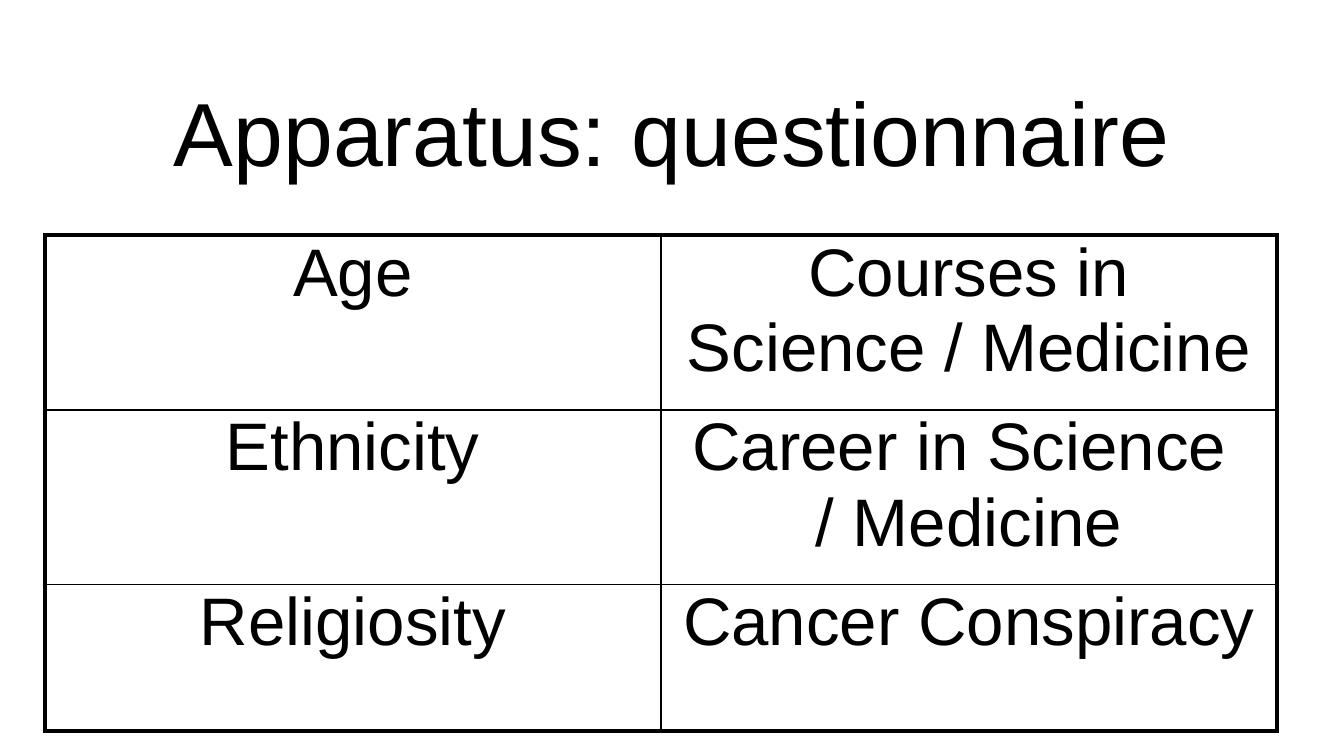
import pptx
import pptx.util
import pptx.dml.color
import pptx.enum.text
import pptx.oxml
import pptx.oxml.ns

Pt = pptx.util.Pt
FONT = "Arial"
INK = "000000"
PAPER = "FFFFFF"
OUTER_LINE = 2.25
INNER_LINE = 1
ROW_HEIGHTS = [93.6, 93.6, 78.5]
QUESTIONS = [
    [["Age"], ["Courses in Science / Medicine"]],
    [["Ethnicity"], ["Career in Science ", "/ Medicine"]],
    [["Religiosity"], ["Cancer Conspiracy"]],
]


def colour(hex_string):
    return pptx.dml.color.RGBColor.from_string(hex_string)


def write_centred(frame, lines, size):
    for index, line in enumerate(lines):
        paragraph = frame.paragraphs[0] if index == 0 else frame.add_paragraph()
        paragraph.alignment = pptx.enum.text.PP_ALIGN.CENTER
        run = paragraph.add_run()
        run.text = line
        run.font.size = Pt(size)
        run.font.name = FONT
        run.font.color.rgb = colour(INK)


def set_borders(cell, widths):
    """Draw the cell's edges; widths maps L, R, T and B to points."""
    properties = cell._tc.get_or_add_tcPr()
    for position, side in enumerate("LRTB"):
        border = pptx.oxml.parse_xml(
            f'<a:ln{side} {pptx.oxml.ns.nsdecls("a")} w="{int(Pt(widths[side]))}">'
            f'<a:solidFill><a:srgbClr val="{INK}"/></a:solidFill>'
            f'<a:prstDash val="solid"/></a:ln{side}>'
        )
        properties.insert(position, border)


def add_title(slide, left, top, width, height):
    title = slide.shapes.add_textbox(Pt(left), Pt(top), Pt(width), Pt(height))
    frame = title.text_frame
    frame.word_wrap = True
    frame.vertical_anchor = pptx.enum.text.MSO_ANCHOR.MIDDLE
    frame.margin_left = frame.margin_right = Pt(7.2)
    frame.margin_top = frame.margin_bottom = Pt(7.2)
    write_centred(frame, ["Apparatus: questionnaire"], 48)


def add_question_table(slide, left, top, width, height):
    row_count, column_count = len(QUESTIONS), len(QUESTIONS[0])
    table = slide.shapes.add_table(
        row_count, column_count, Pt(left), Pt(top), Pt(width), Pt(height)
    ).table
    table.first_row = table.horz_banding = False
    for column in table.columns:
        column.width = Pt(width / column_count)
    for row, row_height in zip(table.rows, ROW_HEIGHTS):
        row.height = Pt(row_height)

    for r, questions in enumerate(QUESTIONS):
        for c, lines in enumerate(questions):
            cell = table.cell(r, c)
            cell.margin_left = cell.margin_right = Pt(11)
            cell.margin_top = cell.margin_bottom = Pt(0)
            cell.fill.solid()
            cell.fill.fore_color.rgb = colour(PAPER)
            write_centred(cell.text_frame, lines, 36)
            on_edge = {
                "L": c == 0,
                "R": c == column_count - 1,
                "T": r == 0,
                "B": r == row_count - 1,
            }
            set_borders(cell, {
                side: OUTER_LINE if outer else INNER_LINE
                for side, outer in on_edge.items()
            })


def main():
    presentation = pptx.Presentation()
    presentation.slide_width = Pt(720)
    presentation.slide_height = Pt(405)
    slide = presentation.slides.add_slide(presentation.slide_layouts[6])
    slide.background.fill.solid()
    slide.background.fill.fore_color.rgb = colour(PAPER)
    add_title(slide, 54, 36, 612, 67.5)
    add_question_table(slide, 24, 126, 660, sum(ROW_HEIGHTS))
    presentation.save("out.pptx")


if __name__ == "__main__":
    main()
